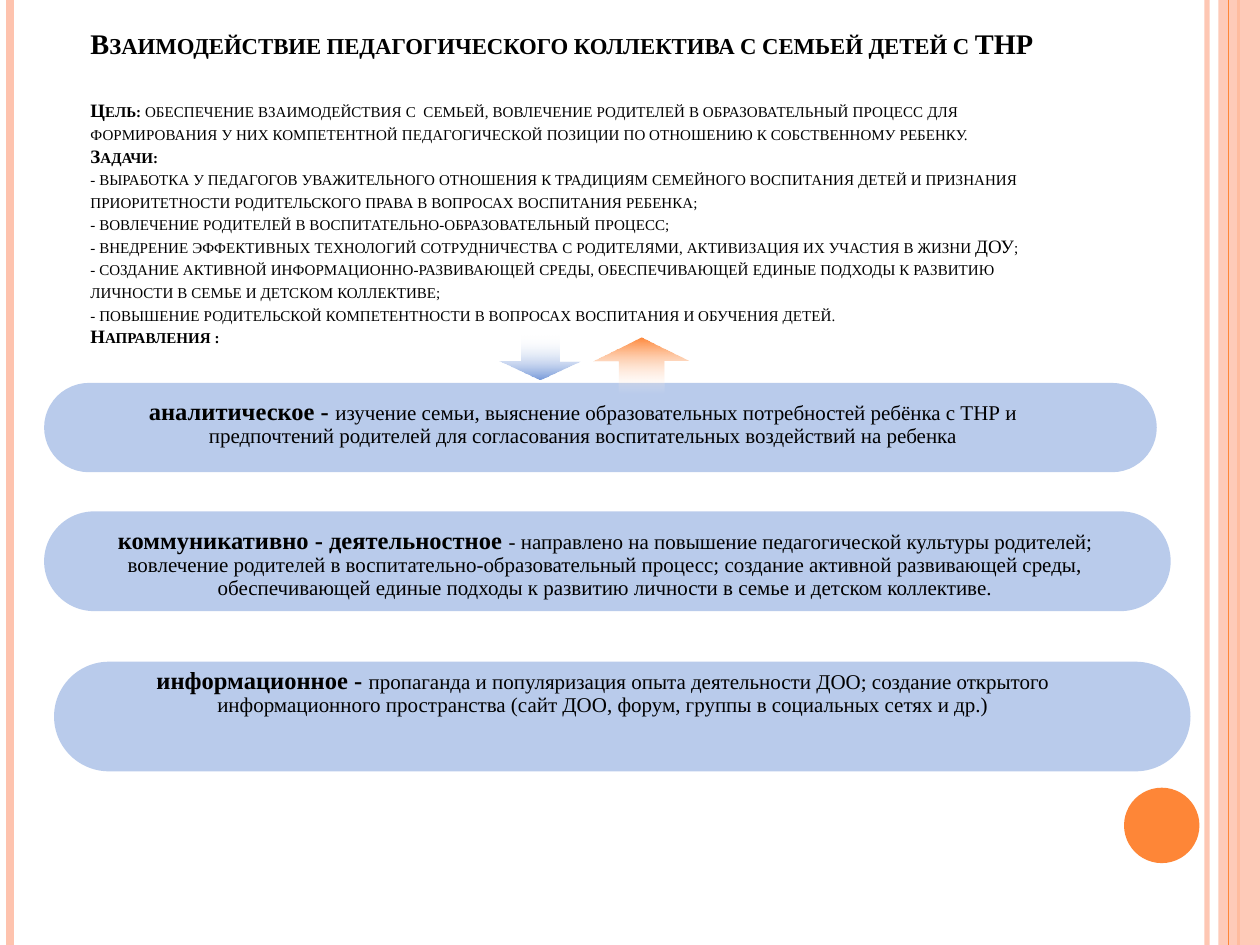
from lxml.etree import SubElement
from pptx import Presentation
from pptx.dml.color import RGBColor
from pptx.enum.shapes import MSO_CONNECTOR, MSO_SHAPE
from pptx.enum.text import MSO_ANCHOR, MSO_AUTO_SIZE, PP_ALIGN
from pptx.oxml.ns import qn
from pptx.util import Cm, Pt

BLACK = RGBColor(0x00, 0x00, 0x00)
WHITE = RGBColor(0xFF, 0xFF, 0xFF)
PEACH = RGBColor(0xFE, 0xC3, 0xAE)
ORANGE = RGBColor(0xFE, 0x86, 0x37)
BLUE = RGBColor(0x75, 0x98, 0xD9)
FONT = "Times New Roman"
SLIDE_WIDTH, SLIDE_HEIGHT = 25.4, 19.05

HEADING = "Взаимодействие педагогического коллектива с семьей детей с ТНР"
GOALS = [
    ("Цель:", " обеспечение взаимодействия с  семьей, вовлечение родителей в образовательный процесс для формирования у них компетентной педагогической позиции по отношению к собственному ребенку."),
    ("Задачи:", ""),
    ("", "‑ выработка у педагогов уважительного отношения к традициям семейного воспитания детей и признания приоритетности родительского права в вопросах воспитания ребенка;"),
    ("", "‑ вовлечение родителей в воспитательно-образовательный процесс;"),
    ("", "‑ внедрение эффективных технологий сотрудничества с родителями, активизация их участия в жизни ДОУ;"),
    ("", "‑ создание активной информационно-развивающей среды, обеспечивающей единые подходы к развитию личности в семье и детском коллективе;"),
    ("", "‑ повышение родительской компетентности в вопросах воспитания и обучения детей."),
    ("Направления :", ""),
]
DIRECTIONS = [
    ((0.89, 7.72, 22.43, 1.8), (1.5, 7.92, 20.52, 1.24), "аналитическое - ",
     "изучение семьи, выяснение образовательных потребностей ребёнка с ТНР и предпочтений родителей для согласования воспитательных воздействий на ребенка"),
    ((0.89, 10.31, 22.71, 2.01), (1.5, 10.52, 21.41, 1.73), "коммуникативно - деятельностное ",
     "- направлено на повышение педагогической культуры родителей; вовлечение родителей в воспитательно-образовательный процесс; создание активной развивающей среды, обеспечивающей единые подходы к развитию личности в семье и детском коллективе."),
    ((1.09, 13.34, 22.91, 2.21), (1.3, 13.34, 21.72, 1.24), "информационное - ",
     "пропаганда и популяризация опыта деятельности ДОО; создание открытого информационного пространства (сайт ДОО, форум, группы в социальных сетях и др.)"),
]


def set_opacity(color, percent):
    SubElement(color, qn("a:alpha"), val=str(percent * 1000))


def add_stripe(slide, x, color, width, opacity=100):
    stripe = slide.shapes.add_connector(
        MSO_CONNECTOR.STRAIGHT, Cm(x), Cm(0), Cm(x), Cm(SLIDE_HEIGHT))
    stripe.line.color.rgb = color
    stripe.line.width = Pt(width)
    SubElement(stripe.element.spPr, qn("a:effectLst"))
    if opacity < 100:
        set_opacity(next(stripe.element.iter(qn("a:srgbClr"))), opacity)


def add_plain_shape(slide, preset, box):
    shape = slide.shapes.add_shape(preset, *map(Cm, box))
    shape.shadow.inherit = False
    shape.line.fill.background()
    return shape


def add_filled_shape(slide, preset, box, color, opacity=100):
    shape = add_plain_shape(slide, preset, box)
    shape.fill.solid()
    shape.fill.fore_color.rgb = color
    if opacity < 100:
        set_opacity(next(shape.element.iter(qn("a:srgbClr"))), opacity)
    return shape


def add_fading_arrow(slide, box, rotation, color):
    arrow = add_plain_shape(slide, MSO_SHAPE.RIGHT_ARROW, box)
    arrow.rotation = rotation
    arrow.adjustments[0] = 0.47
    arrow.adjustments[1] = 0.42
    arrow.fill.gradient()
    arrow.fill.gradient_angle = 0
    tail, tip = arrow.fill.gradient_stops
    tail.color.rgb = WHITE
    tip.color.rgb = color
    set_opacity(next(arrow.element.iter(qn("a:srgbClr"))), 0)


def add_run(paragraph, text, size, bold, small_caps=False):
    run = paragraph.add_run()
    run.text = text
    run.font.name = FONT
    run.font.size = Pt(size)
    run.font.bold = bold
    run.font.color.rgb = BLACK
    if small_caps:
        run.font._element.set("cap", "small")


def fill_title(slide):
    title = slide.shapes.title
    title.left, title.top, title.width, title.height = map(Cm, (1.57, 0.58, 20.42, 6.55))
    frame = title.text_frame
    frame.word_wrap = True
    frame.auto_size = MSO_AUTO_SIZE.NONE
    frame.vertical_anchor = MSO_ANCHOR.BOTTOM
    heading = frame.paragraphs[0]
    heading.alignment = PP_ALIGN.LEFT
    heading.space_after = Pt(22)
    add_run(heading, HEADING, 16.2, True, small_caps=True)
    for label, statement in GOALS:
        goal = frame.add_paragraph()
        goal.alignment = PP_ALIGN.LEFT
        goal.space_before = Pt(0)
        goal.line_spacing = Pt(12.9)
        for text, bold in ((label, True), (statement, False)):
            if text:
                add_run(goal, text, 10.8, bold, small_caps=True)


def add_direction_text(slide, box, name, description):
    frame = slide.shapes.add_textbox(*map(Cm, box)).text_frame
    frame.word_wrap = True
    frame.auto_size = MSO_AUTO_SIZE.SHAPE_TO_FIT_TEXT
    direction = frame.paragraphs[0]
    direction.alignment = PP_ALIGN.CENTER
    direction.line_spacing = 0.9
    add_run(direction, name, 14, True)
    add_run(direction, description, 12, False)


def add_side_decoration(slide):
    add_stripe(slide, 24.33, PEACH, 3, 93)
    add_stripe(slide, 0.2, PEACH, 4.5)
    add_stripe(slide, 24.97, ORANGE, 1.5)
    add_filled_shape(slide, MSO_SHAPE.RECTANGLE, (24.56, 0, 0.84, SLIDE_HEIGHT), PEACH, 87)
    add_stripe(slide, 24.77, ORANGE, 0.75)
    add_filled_shape(slide, MSO_SHAPE.OVAL, (22.66, 15.88, 1.52, 1.52), ORANGE)


def main():
    presentation = Presentation()
    presentation.slide_width = Cm(SLIDE_WIDTH)
    presentation.slide_height = Cm(SLIDE_HEIGHT)
    slide = presentation.slides.add_slide(presentation.slide_layouts[5])
    add_side_decoration(slide)
    fill_title(slide)
    for pill_box, text_box, name, description in DIRECTIONS:
        pill = add_filled_shape(slide, MSO_SHAPE.ROUNDED_RECTANGLE, pill_box, BLUE, 50)
        pill.adjustments[0] = 0.5
        add_direction_text(slide, text_box, name, description)
    add_fading_arrow(slide, (10.44, 6.4, 0.89, 1.63), 90, BLUE)
    add_fading_arrow(slide, (12.37, 6.4, 1.14, 1.93), 270, ORANGE)
    presentation.save("out.pptx")


if __name__ == "__main__":
    main()
